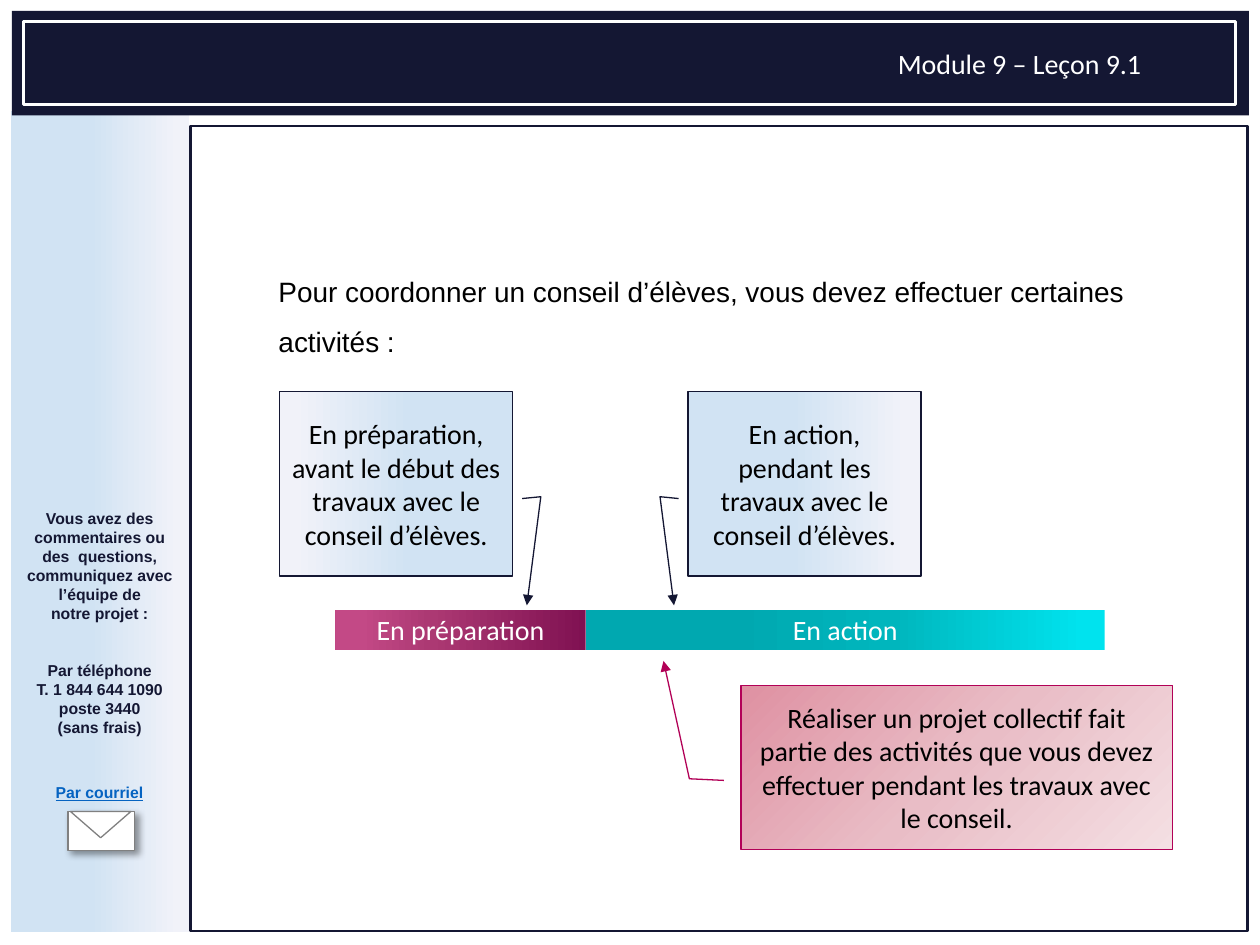
import pptx
import pptx.util
import pptx.dml.color
import pptx.enum.shapes
import pptx.enum.text
import pptx.oxml.ns
import lxml.etree

Cm, Pt = pptx.util.Cm, pptx.util.Pt
RGB = pptx.dml.color.RGBColor.from_string
SHAPE = pptx.enum.shapes.MSO_SHAPE
ALIGN = pptx.enum.text.PP_ALIGN
ANCHOR = pptx.enum.text.MSO_ANCHOR
FIT = pptx.enum.text.MSO_AUTO_SIZE
qn = pptx.oxml.ns.qn

HEADER = "Module 9 – Leçon 9.1"
TITLE = "Pour coordonner un conseil d’élèves, vous devez effectuer certaines activités\u00a0:"
CONTACT = [
    "Vous avez des commentaires ou des  questions, communiquez avec l’équipe de\vnotre projet :",
    "Par téléphone\vT. 1 844 644 1090\vposte 3440\v(sans frais)",
]
MAIL = "Par courriel"
PHASES = [("En préparation", 5.05, "plum"), ("En action", 10.46, "teal")]
SIDE = (0.58, -0.04, 0.57, -0.12)
CALLOUTS = [
    ("Réaliser un projet collectif fait partie des activités que vous devez effectuer "
     "pendant les travaux avec le conseil.",
     (14.94, 13.82, 8.69, 3.3), SIDE + (-0.15, -0.18), "rose", "crimson", False),
    ("En préparation, avant le début des travaux avec le conseil d’élèves.",
     (5.64, 7.9, 4.7, 3.71), SIDE + (1.16, -0.06), "ice", "navy", True),
    ("En action, pendant les travaux avec le conseil d’élèves.",
     (13.87, 7.9, 4.7, 3.71), SIDE + (1.16, -0.06), "ice", "navy", False),
]

THEME = {
    "colours": {"navy": "141733", "white": "FFFFFF", "black": "000000",
                "grey": "808080", "link": "0563C1", "crimson": "B20157"},
    "gradients": {
        "ice": (180, [(6, "F1F2F9"), (56, "D1E3F3"), (99, "CEE1F2")]),
        "rose": (45, [(0, "DF91A2"), (50, "E9BDC6"), (100, "F4DFE3")]),
        "plum": (180, [(0, "801152"), (62, "AC3973"), (90, "C34986")]),
        "teal": (180, [(4, "00E3EE"), (41, "00B6BD"), (72, "00A8B0")]),
    },
    "fonts": {
        "title": {"name": "Arial", "size": Pt(16), "bold": False},
        "label": {"name": "Calibri", "size": Pt(16)},
        "contact": {"name": "Arial", "size": Pt(9), "bold": True},
        "link": {"name": "Arial", "size": Pt(9), "bold": True, "underline": True},
    },
}


def colour(name):
    return RGB(THEME["colours"][name])


def apply(obj, values):
    for key, value in values.items():
        setattr(obj, key, value)


def child(parent, tag, **attrs):
    return lxml.etree.SubElement(parent, qn(tag), attrs)


def paint(sp, fill):
    if fill is None:
        sp.fill.background()
    elif fill in THEME["colours"]:
        sp.fill.solid()
        sp.fill.fore_color.rgb = colour(fill)
    else:
        angle, stops = THEME["gradients"][fill]
        sp.fill.gradient()
        sp.fill.gradient_angle = 360 - angle
        stop_list = sp._element.spPr.find(qn("a:gradFill")).find(qn("a:gsLst"))
        stop_list.clear()
        for pos, value in stops:
            child(child(stop_list, "a:gs", pos=str(pos * 1000)), "a:srgbClr", val=value)


def add_shape(parent, kind, box, fill=None, line=None, width=0.75):
    sp = parent.add_shape(kind, *map(Cm, box))
    sp.shadow.inherit = False
    paint(sp, fill)
    if line:
        sp.line.color.rgb = colour(line)
        sp.line.width = Pt(width)
    else:
        sp.line.fill.background()
    return sp


def write(sp, paragraphs, font, ink, align=ALIGN.CENTER, **frame):
    tf = sp.text_frame
    apply(tf, {"word_wrap": True, **frame})
    for i, text in enumerate(paragraphs):
        p = tf.add_paragraph() if i else tf.paragraphs[0]
        p.text = text
        p.alignment = align
        if i:
            p.space_before = Pt(22)
        for r in p.runs:
            apply(r.font, THEME["fonts"][font])
            r.font.color.rgb = colour(ink)
        for br in p._p.findall(qn("a:br")):
            child(br, "a:rPr", sz=str(int(THEME["fonts"][font]["size"].pt * 100)))
    return tf


def add_text(shapes, box, paragraphs, font, ink, **frame):
    write(shapes.add_textbox(*map(Cm, box)), paragraphs, font, ink, **frame)


def add_chrome(shapes):
    add_shape(shapes, SHAPE.RECTANGLE, (0.23, 2.24, 3.58, 16.54), "ice")
    add_shape(shapes, SHAPE.RECTANGLE, (3.84, 2.54, 21.31, 16.23), None, "navy", 1.5)
    add_shape(shapes, SHAPE.RECTANGLE, (0.24, 0.22, 24.94, 2.11), "navy")
    add_shape(shapes, SHAPE.RECTANGLE, (0.48, 0.43, 24.43, 1.68), None, "white", 1.5)
    add_text(shapes, (0.23, 10.13, 3.56, 4.88), CONTACT, "contact", "navy")
    add_text(shapes, (17.48, 0.81, 6.15, 0.94), [HEADER], "label", "white")
    add_text(shapes, (0.86, 15.65, 2.29, 0.64), [MAIL], "link", "link", word_wrap=False)


def add_envelope(shapes):
    group = shapes.add_group_shape().shapes
    body = add_shape(group, SHAPE.RECTANGLE, (1.37, 16.36, 1.35, 0.79), "white", "grey")
    effects = body._element.spPr.find(qn("a:effectLst"))
    shadow = child(effects, "a:outerShdw", blurRad=str(Pt(4)), dist=str(Pt(3)),
                   dir="2700000", algn="tl", rotWithShape="0")
    child(child(shadow, "a:srgbClr", val=THEME["colours"]["black"]), "a:alpha", val="40000")
    flap = add_shape(group, SHAPE.ISOSCELES_TRIANGLE, (1.42, 16.36, 1.22, 0.53), "white", "grey")
    flap._element.spPr.xfrm.set("flipV", "1")


def add_phases(shapes):
    group = shapes.add_group_shape().shapes
    left = 6.76
    for text, width, fill in PHASES:
        sp = add_shape(group, SHAPE.RECTANGLE, (left, 12.29, width, 0.81), fill)
        write(sp, [text], "label", "white", vertical_anchor=ANCHOR.MIDDLE)
        left += width


def add_callout(shapes, text, box, adjustments, fill, line, flipped):
    sp = add_shape(shapes, SHAPE.LINE_CALLOUT_2, box, fill, line)
    for i, value in enumerate(adjustments):
        sp.adjustments[i] = value
    if flipped:
        sp._element.spPr.xfrm.set("flipH", "1")
    child(sp._element.spPr.find(qn("a:ln")), "a:tailEnd", type="triangle")
    write(sp, [text], "label", "black", vertical_anchor=ANCHOR.MIDDLE)


def main():
    prs = pptx.Presentation()
    prs.slide_width, prs.slide_height = Cm(25.4), Cm(19.05)
    s = prs.slides.add_slide(prs.slide_layouts[5])
    add_chrome(s.shapes)
    add_envelope(s.shapes)
    title = s.shapes.title
    apply(title, {"left": Cm(5.36), "top": Cm(5.08), "width": Cm(18.26), "height": Cm(2.26)})
    tf = write(title, [TITLE], "title", "black", ALIGN.LEFT,
               vertical_anchor=ANCHOR.MIDDLE, auto_size=FIT.NONE)
    apply(tf.paragraphs[0], {"line_spacing": 1.5, "space_after": Pt(36)})
    add_phases(s.shapes)
    for callout in CALLOUTS:
        add_callout(s.shapes, *callout)
    prs.save("out.pptx")


if __name__ == "__main__":
    main()
